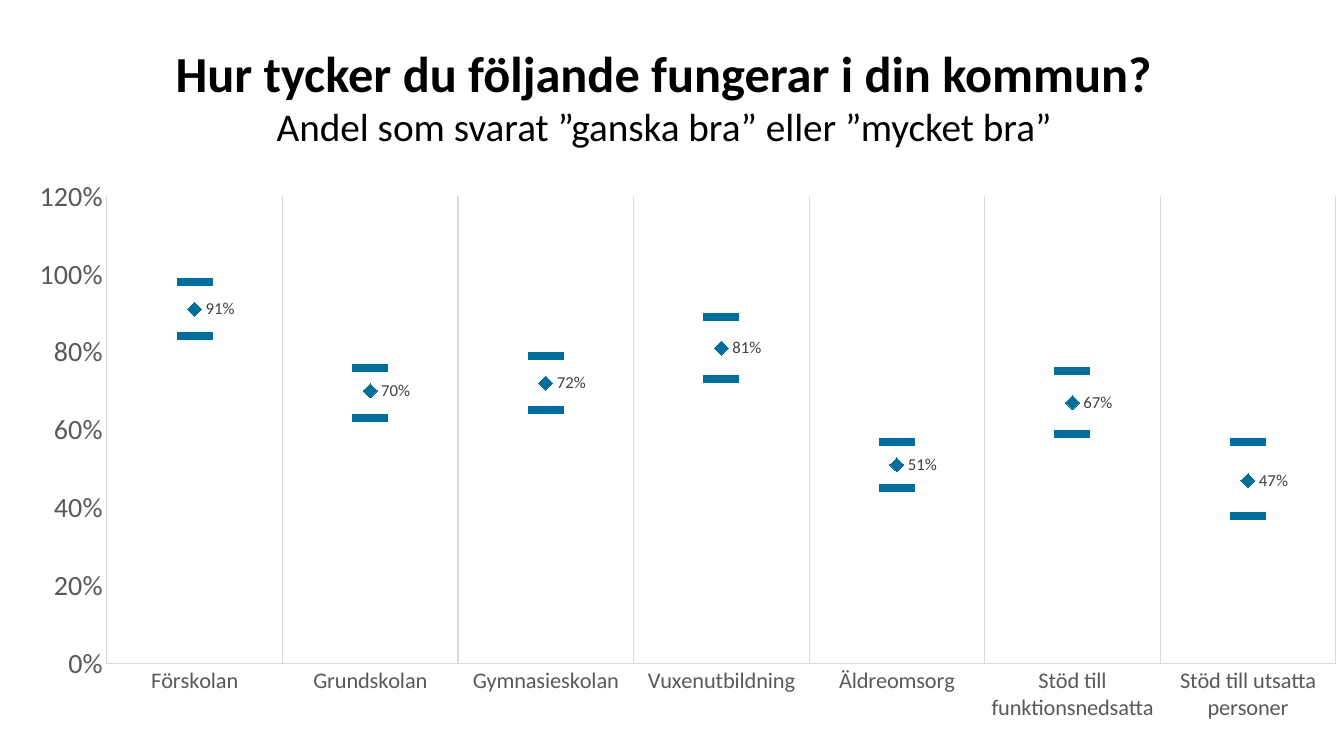
from pptx import Presentation
from pptx import util as u
from pptx.chart.data import CategoryChartData
from pptx.dml.color import RGBColor
from pptx.enum import chart as ch, text
from pptx.oxml import parse_xml
from pptx.oxml.ns import nsdecls
from lxml import etree

HEAD = "Hur tycker du följande fungerar i din kommun?"
SUB = "Andel som svarat ”ganska bra” eller ”mycket bra”"
CATS = ["Förskolan", "Grundskolan", "Gymnasieskolan", "Vuxenutbildning",
        "Äldreomsorg", "Stöd till funktionsnedsatta",
        "Stöd till utsatta personer"]
ROWS = [
    ("Series 1", [0.84, 0.63, 0.65, 0.73, 0.45, 0.59, 0.38], "dash"),
    ("Series 2", [0.91, 0.70, 0.72, 0.81, 0.51, 0.67, 0.47], "diamond"),
    ("Series 3", [0.98, 0.76, 0.79, 0.89, 0.57, 0.75, 0.57], "dash"),
]
MARKS = {
    "dash": (ch.XL_MARKER_STYLE.DASH, 25),
    "diamond": (ch.XL_MARKER_STYLE.DIAMOND, 10),
}
PLOT = {"x": 0.087, "y": 0.023, "w": 0.907, "h": 0.769}
THEME = {
    "font": "Calibri", "ink": "000000", "mark": "006E9A", "axis": "595959",
    "grid": "D9D9D9", "label": "404040",
    "head": 36, "sub": 28, "value": 20, "cat": 16, "tag": 12, "base": 10,
}


def px(n):
    return u.Emu(round(n * 914400 / 100.8))


def tone(name):
    return RGBColor.from_string(THEME[name])


def style(font, size, color, bold=False):
    font.name = THEME["font"]
    font.size = u.Pt(THEME[size])
    font.bold = bold
    font.color.rgb = tone(color)


def write(para, words, size, color="ink", bold=False):
    run = para.add_run()
    run.text = words
    style(run.font, size, color, bold)
    return run


def place(shape, left, top, width, height):
    shape.left, shape.top = px(left), px(top)
    shape.width, shape.height = px(width), px(height)


def stroke(line):
    line.color.rgb = tone("grid")
    line.width = u.Pt(0.75)


def layout(chart):
    tags = "".join(f'<c:{k}Mode val="edge"/>' for k in "xy")
    tags += "".join(f'<c:{k} val="{v}"/>' for k, v in PLOT.items())
    area = chart._chartSpace.chart.plotArea
    for old in area.findall("{*}layout"):
        area.remove(old)
    area.insert(0, parse_xml(
        f'<c:layout {nsdecls("c")}><c:manualLayout>'
        f'<c:layoutTarget val="inner"/>{tags}</c:manualLayout></c:layout>'))


def title(slide):
    box = slide.shapes.title
    place(box, 77, 36, 1174, 119)
    frame = box.text_frame
    frame.word_wrap = True
    frame.auto_size = text.MSO_AUTO_SIZE.SHAPE_TO_FIT_TEXT
    frame.vertical_anchor = text.MSO_ANCHOR.MIDDLE
    para = frame.paragraphs[0]
    para.alignment = text.PP_ALIGN.CENTER
    write(para, HEAD, "head", bold=True)
    para.add_line_break()
    rule = etree.SubElement(para._p[-1], para._p.r_lst[0][0].tag)
    rule.set("sz", str(THEME["head"] * 100))
    write(para, SUB, "sub")


def graph(slide):
    data = CategoryChartData(number_format="0%")
    data.categories = CATS
    for name, vals, kind in ROWS:
        data.add_series(name, vals)
    chart = slide.shapes.add_chart(
        ch.XL_CHART_TYPE.LINE_MARKERS,
        px(-11), px(179), px(1355), px(611), data).chart
    chart.has_legend = False
    chart.has_title = False
    style(chart.font, "base", "ink")
    layout(chart)

    cat, val = chart.category_axis, chart.value_axis
    for axis, size in ((cat, "cat"), (val, "value")):
        axis.major_tick_mark = ch.XL_TICK_MARK.NONE
        axis.minor_tick_mark = ch.XL_TICK_MARK.NONE
        style(axis.tick_labels.font, size, "axis")
    cat.has_major_gridlines = True
    stroke(cat.major_gridlines.format.line)
    stroke(cat.format.line)
    val.has_major_gridlines = False
    val.format.line.fill.background()
    val.minimum_scale, val.maximum_scale, val.major_unit = 0, 1.2, 0.2
    val.tick_labels.number_format = "0%"
    val.tick_labels.number_format_is_linked = False

    for line, (name, vals, kind) in zip(chart.plots[0].series, ROWS):
        line.smooth = False
        line.format.line.fill.background()
        mark = line.marker
        mark.style, mark.size = MARKS[kind]
        mark.format.fill.solid()
        mark.format.fill.fore_color.rgb = tone("mark")
        mark.format.line.fill.background()
        if kind == "diamond":
            tags = line.data_labels
            tags.show_value = True
            tags.number_format = "0%"
            tags.number_format_is_linked = False
            tags.position = ch.XL_LABEL_POSITION.RIGHT
            style(tags.font, "tag", "label")


def main():
    deck = Presentation()
    deck.slide_width, deck.slide_height = px(1344), px(756)
    slide = deck.slides.add_slide(deck.slide_layouts[5])
    title(slide)
    graph(slide)
    deck.save("out.pptx")


if __name__ == "__main__":
    main()
